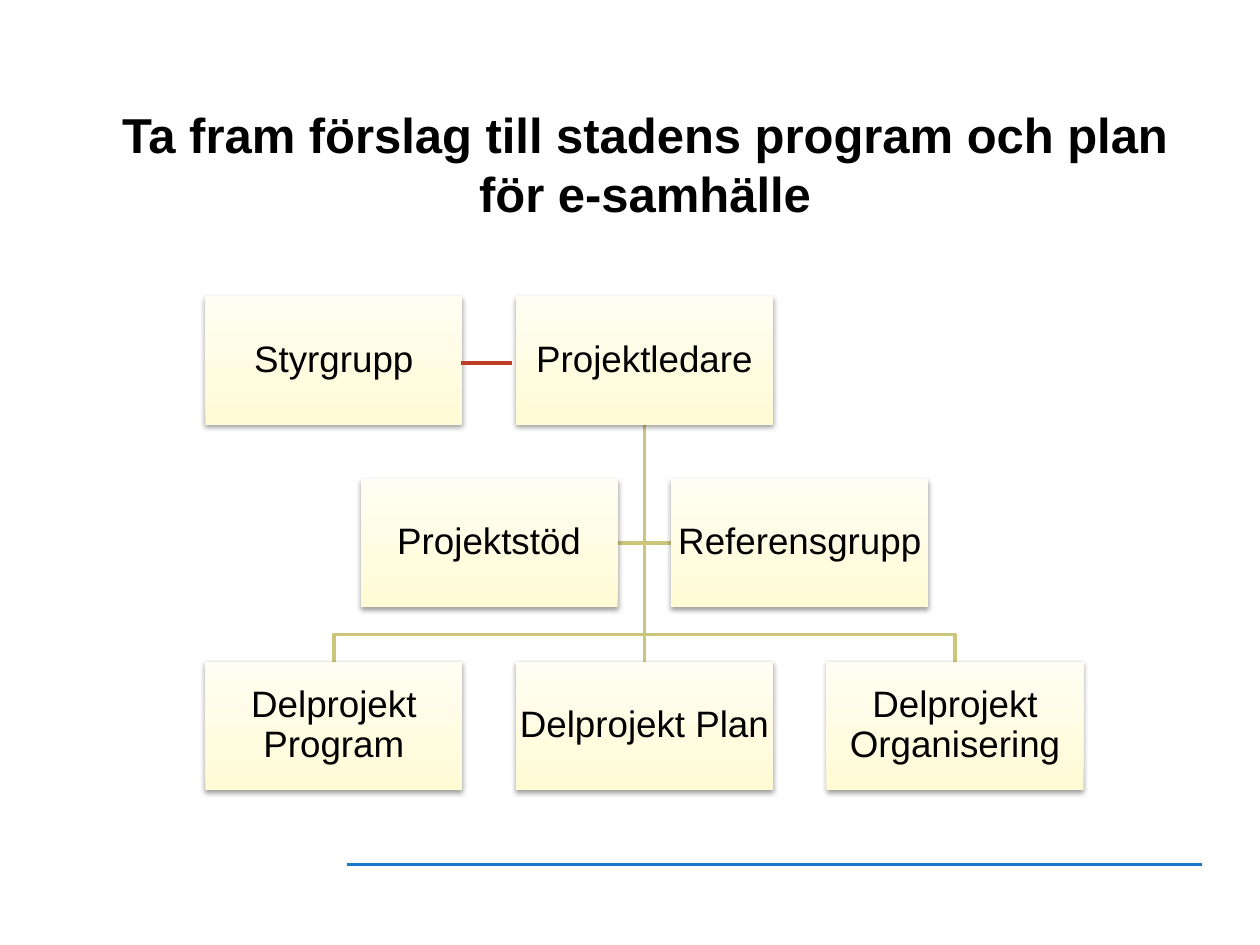
from pptx import Presentation
from pptx.dml.color import RGBColor
from pptx.enum.shapes import MSO_CONNECTOR, MSO_SHAPE
from pptx.enum.text import MSO_ANCHOR, PP_ALIGN
from pptx.oxml import parse_xml
from pptx.oxml.ns import nsdecls, qn
from pptx.util import Inches, Pt

TITLE = "Ta fram förslag till stadens program och plan för e-samhälle"
# Label, column and row of each box; half columns sit between the others
BOXES = [
    ("Styrgrupp", 0, 0),
    ("Projektledare", 1, 0),
    ("Delprojekt Program", 0, 2),
    ("Delprojekt Plan", 1, 2),
    ("Delprojekt Organisering", 2, 2),
    ("Projektstöd", 0.5, 1),
    ("Referensgrupp", 1.5, 1),
]

FONT = "Arial"
BLACK = RGBColor(0x00, 0x00, 0x00)
KHAKI = RGBColor(0xCC, 0xC6, 0x7B)
RED = RGBColor(0xBF, 0x3D, 0x27)
BLUE = RGBColor(0x1A, 0x79, 0xCC)
CREAM_STOPS = [
    (0, RGBColor(0xFF, 0xFB, 0xD4)),
    (35, RGBColor(0xFF, 0xFC, 0xE0)),
    (100, RGBColor(0xFF, 0xFE, 0xF3)),
]

# Chart grid, in inches
LEFT, TOP = 1.63, 2.35
BOX_W, BOX_H = 2.04, 1.02
COL_STEP, ROW_STEP = 2.465, 1.45


def col_x(col):
    return LEFT + col * COL_STEP


def row_y(row):
    return TOP + row * ROW_STEP


def center_x(col):
    return col_x(col) + BOX_W / 2


def add_line(slide, start, end, color):
    line = slide.shapes.add_connector(
        MSO_CONNECTOR.STRAIGHT, *(Inches(v) for v in start + end))
    line.line.color.rgb = color
    line.line.width = Pt(2)
    line._element.spPr.append(parse_xml(f"<a:effectLst {nsdecls('a')}/>"))


def add_elbow(slide, points):
    start, *rest = [(Inches(x), Inches(y)) for x, y in points]
    builder = slide.shapes.build_freeform(*start)
    builder.add_line_segments(rest, close=False)
    sp = builder.convert_to_shape()
    sp.shadow.inherit = False
    sp.fill.background()
    sp.line.color.rgb = KHAKI
    sp.line.width = Pt(2)


def style_box(sp):
    sp.line.fill.background()
    sp.fill.gradient()
    sp.fill.gradient_angle = 90
    stops = "".join(f'<a:gs pos="{pos * 1000}"><a:srgbClr val="{color}"/></a:gs>'
                    for pos, color in CREAM_STOPS)
    spPr = sp._element.spPr
    grad = spPr.find(qn("a:gradFill"))
    grad.replace(grad.find(qn("a:gsLst")),
                 parse_xml(f"<a:gsLst {nsdecls('a')}>{stops}</a:gsLst>"))
    sp.shadow.inherit = False
    spPr.find(qn("a:effectLst")).append(parse_xml(
        f'<a:outerShdw {nsdecls("a")} blurRad="{Pt(3.1)}" dist="{Pt(1.6)}" '
        'dir="5400000" rotWithShape="0"><a:srgbClr val="000000">'
        '<a:alpha val="38000"/></a:srgbClr></a:outerShdw>'))


def add_box(slide, label, col, row):
    sp = slide.shapes.add_shape(
        MSO_SHAPE.RECTANGLE, Inches(col_x(col)), Inches(row_y(row)),
        Inches(BOX_W), Inches(BOX_H))
    style_box(sp)
    tf = sp.text_frame
    tf.word_wrap = True
    tf.vertical_anchor = MSO_ANCHOR.MIDDLE
    tf.margin_left = tf.margin_right = Inches(0.01)
    tf.margin_top = tf.margin_bottom = Inches(0.01)
    p = tf.paragraphs[0]
    p.text = label
    p.alignment = PP_ALIGN.CENTER
    p.line_spacing = 0.9
    p.font.name, p.font.size, p.font.color.rgb = FONT, Pt(21), BLACK


def main():
    prs = Presentation()
    prs.slide_width, prs.slide_height = Inches(10), Inches(7.5)
    slide = prs.slides.add_slide(prs.slide_layouts[5])

    # Footer rule
    add_line(slide, (2.75, 6.86), (9.54, 6.86), BLUE)

    # Title
    title = slide.shapes.title
    title.left, title.top = Inches(0.86), Inches(0.67)
    title.width, title.height = Inches(8.52), Inches(1.25)
    tf = title.text_frame
    tf.text = TITLE
    tf.word_wrap = True
    tf.vertical_anchor = MSO_ANCHOR.MIDDLE
    p = tf.paragraphs[0]
    p.alignment = PP_ALIGN.CENTER
    p.font.name, p.font.size, p.font.bold = FONT, Pt(28), True
    p.font.color.rgb = BLACK

    # Branches from the project leader
    trunk_x, trunk_y = center_x(1), row_y(0) + BOX_H
    bottom_y = row_y(2)
    side_y = row_y(1) + BOX_H / 2
    fork_y = (row_y(1) + BOX_H + bottom_y) / 2
    for x in (col_x(1.5), col_x(0.5) + BOX_W):
        add_elbow(slide, [(trunk_x, trunk_y), (trunk_x, side_y), (x, side_y)])
    for x in (center_x(2), center_x(0)):
        add_elbow(slide, [(trunk_x, trunk_y), (trunk_x, fork_y),
                          (x, fork_y), (x, bottom_y)])
    add_line(slide, (trunk_x, trunk_y), (trunk_x, bottom_y), KHAKI)

    # Boxes
    for label, col, row in BOXES:
        add_box(slide, label, col, row)

    # Link between steering group and project leader
    add_line(slide, (3.66, 2.88), (4.06, 2.88), RED)

    prs.save("out.pptx")


if __name__ == "__main__":
    main()
